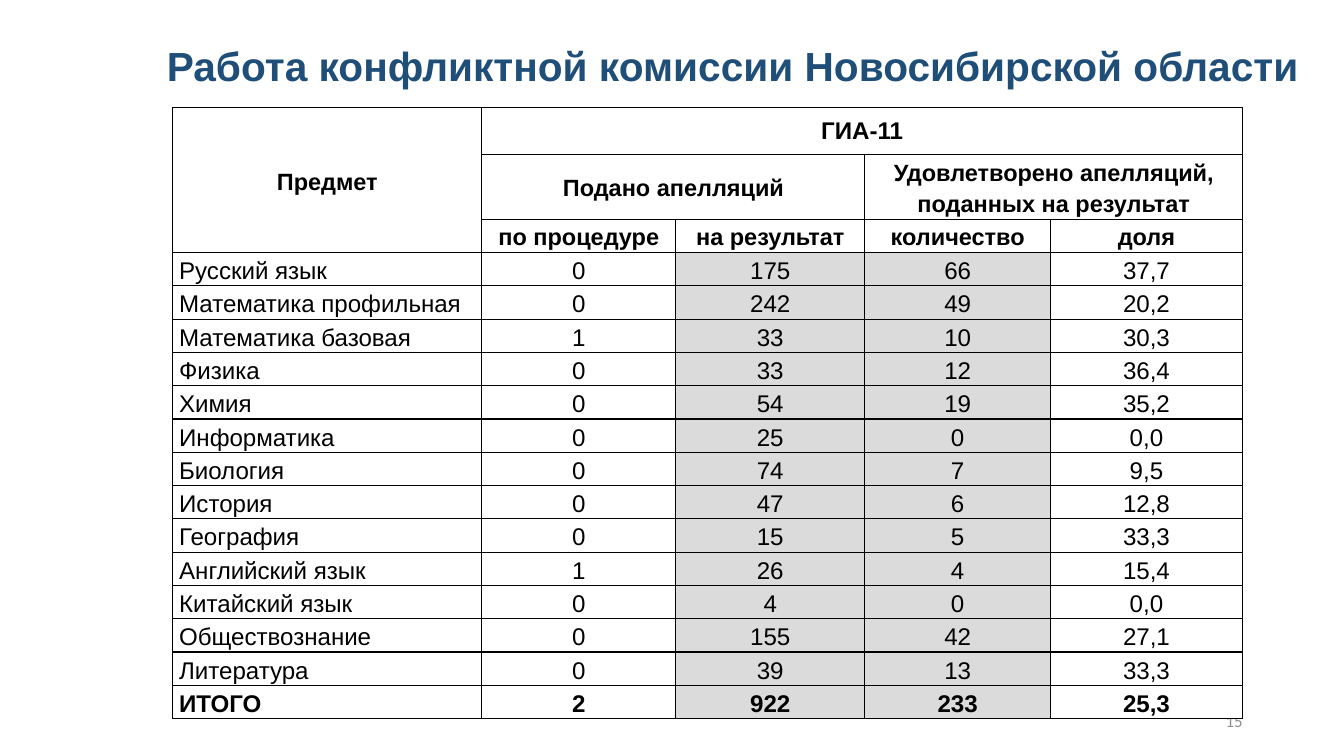
"""Build the slide on the work of the Novosibirsk region appeals commission."""
import pptx
import pptx.util
import pptx.dml.color
import pptx.enum.text
import pptx.oxml
import pptx.oxml.ns

Inches, Pt = pptx.util.Inches, pptx.util.Pt
RGBColor = pptx.dml.color.RGBColor
ALIGN = pptx.enum.text.PP_ALIGN
MIDDLE = pptx.enum.text.MSO_ANCHOR.MIDDLE

BLACK = RGBColor(0x00, 0x00, 0x00)
WHITE = RGBColor(0xFF, 0xFF, 0xFF)
SHADE = RGBColor(0xDB, 0xDB, 0xDB)
NAVY = RGBColor(0x1F, 0x4E, 0x79)
GRAY = RGBColor(0x8C, 0x8C, 0x8C)

TITLE = "Работа конфликтной комиссии Новосибирской области"
PAGE = "15"

# row, column, rows spanned, columns spanned, text, size, line spacing
HEADERS = [
    (0, 0, 3, 1, "Предмет", 18.5, 1.15),
    (0, 1, 1, 4, "ГИА-11", 19, 1),
    (1, 1, 1, 2, "Подано апелляций", 18.5, 1.15),
    (1, 3, 1, 2, "Удовлетворено апелляций, поданных на результат", 18.5, 1.15),
    (2, 1, 1, 1, "по процедуре", 18.5, 1.15),
    (2, 2, 1, 1, "на результат", 18.5, 1.15),
    (2, 3, 1, 1, "количество", 18.5, 1.15),
    (2, 4, 1, 1, "доля", 18.5, 1.15),
]
SUBJECTS = [
    ("Русский язык", "0", "175", "66", "37,7"),
    ("Математика профильная", "0", "242", "49", "20,2"),
    ("Математика базовая", "1", "33", "10", "30,3"),
    ("Физика", "0", "33", "12", "36,4"),
    ("Химия", "0", "54", "19", "35,2"),
    ("Информатика", "0", "25", "0", "0,0"),
    ("Биология", "0", "74", "7", "9,5"),
    ("История", "0", "47", "6", "12,8"),
    ("География", "0", "15", "5", "33,3"),
    ("Английский язык", "1", "26", "4", "15,4"),
    ("Китайский язык", "0", "4", "0", "0,0"),
    ("Обществознание", "0", "155", "42", "27,1"),
    ("Литература", "0", "39", "13", "33,3"),
    ("ИТОГО", "2", "922", "233", "25,3"),
]
COLUMNS = [3.38, 2.12, 2.07, 2.03, 2.1]
SHADED = (2, 3)
HEADER_ROWS = 3
TABLE_HEIGHT = 6.67
TOP_ROWS = [0.51, 0.71]


def write(tf, text, size=19, font="Arial", color=BLACK, bold=False,
          align=ALIGN.CENTER, spacing=1):
    p = tf.paragraphs[0]
    p.alignment = align
    p.line_spacing = spacing
    r = p.add_run()
    r.text = text
    r.font.name = font
    r.font.size = Pt(size)
    r.font.bold = bold
    r.font.color.rgb = color


def style_cell(cell, fill):
    tcPr = cell._tc.get_or_add_tcPr()
    for side in "LRTB":
        tcPr.append(pptx.oxml.parse_xml(
            f'<a:ln{side} {pptx.oxml.ns.nsdecls("a")} w="{Pt(1)}"><a:solidFill>'
            f'<a:srgbClr val="{BLACK}"/></a:solidFill></a:ln{side}>'))
    cell.fill.solid()
    cell.fill.fore_color.rgb = fill
    cell.vertical_anchor = MIDDLE
    cell.margin_left = cell.margin_right = Inches(0.07)
    cell.margin_top = cell.margin_bottom = 0


def add_table(s):
    count = HEADER_ROWS + len(SUBJECTS)
    plain = (TABLE_HEIGHT - sum(TOP_ROWS)) / (count - len(TOP_ROWS))
    heights = TOP_ROWS + [plain] * (count - len(TOP_ROWS))
    table = s.shapes.add_table(
        count, len(COLUMNS), Inches(1.89), Inches(1.18),
        Inches(sum(COLUMNS)), Inches(TABLE_HEIGHT)).table
    table.first_row = table.horz_banding = False
    for column, width in zip(table.columns, COLUMNS):
        column.width = Inches(width)
    for row, height in zip(table.rows, heights):
        row.height = Inches(height)
    for i in range(count):
        for j in range(len(COLUMNS)):
            shaded = i >= HEADER_ROWS and j in SHADED
            style_cell(table.cell(i, j), SHADE if shaded else WHITE)
    for i, j, down, across, text, size, spacing in HEADERS:
        cell = table.cell(i, j)
        if down * across > 1:
            cell.merge(table.cell(i + down - 1, j + across - 1))
        write(cell.text_frame, text, size=size, bold=True, spacing=spacing)
    for i, values in enumerate(SUBJECTS, HEADER_ROWS):
        for j, text in enumerate(values):
            write(table.cell(i, j).text_frame, text, bold=i == count - 1,
                  align=ALIGN.CENTER if j else ALIGN.LEFT, spacing=1.15)


def main():
    prs = pptx.Presentation()
    prs.slide_width, prs.slide_height = Inches(14.7), Inches(8.27)
    s = prs.slides.add_slide(prs.slide_layouts[5])

    title = s.shapes.title
    title.left, title.top = Inches(1.68), Inches(0.39)
    title.width, title.height = Inches(12.68), Inches(0.64)
    tf = title.text_frame
    tf.word_wrap = False
    tf.auto_size = pptx.enum.text.MSO_AUTO_SIZE.SHAPE_TO_FIT_TEXT
    tf.vertical_anchor = MIDDLE
    write(tf, TITLE, size=32, color=NAVY, bold=True)

    number = s.shapes.add_textbox(Inches(10.38), Inches(7.66), Inches(3.31), Inches(0.44))
    tf = number.text_frame
    tf.word_wrap = True
    tf.vertical_anchor = MIDDLE
    write(tf, PAGE, size=13.2, font="Calibri", color=GRAY, align=ALIGN.RIGHT)

    add_table(s)
    prs.save("out.pptx")


if __name__ == "__main__":
    main()
